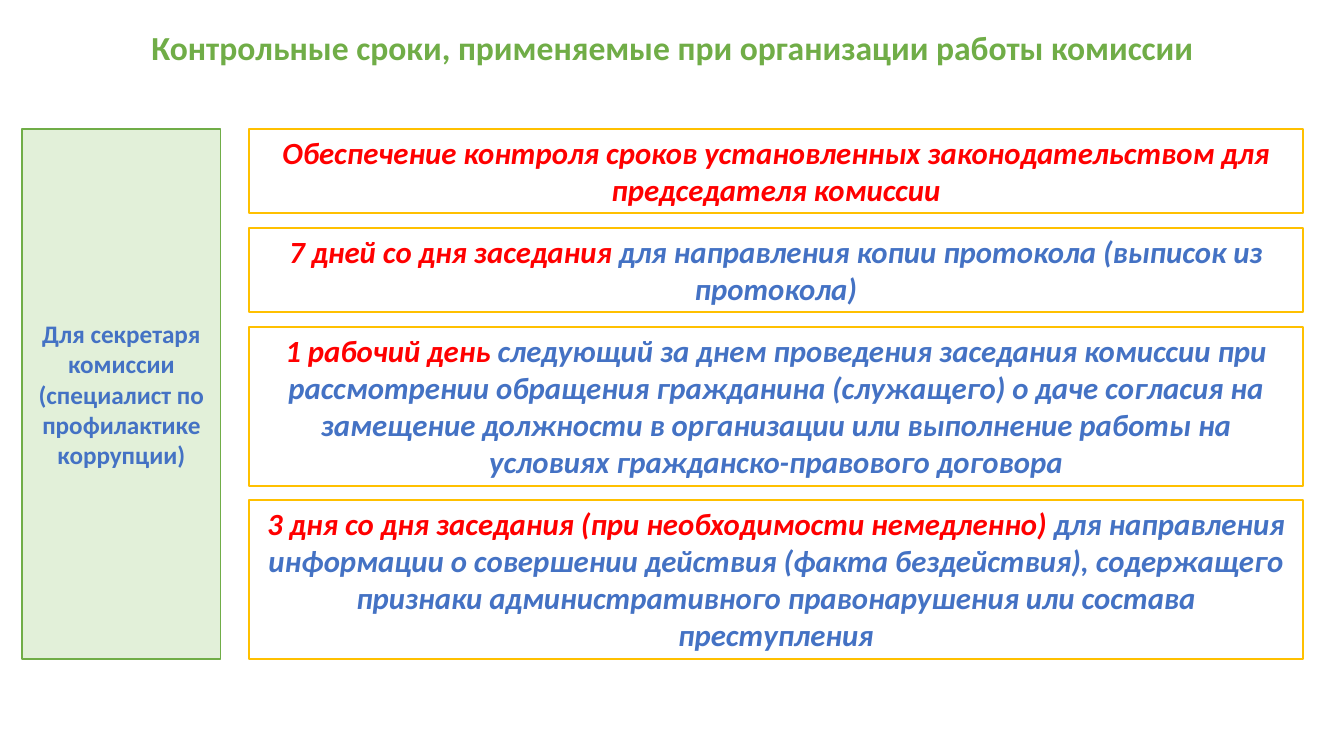
from pptx import Presentation
from pptx import util as u
from pptx.dml.color import RGBColor
from pptx.enum import shapes, text

COLORS = {
    "white": "FFFFFF",
    "green": "70AD47",
    "pale_green": "E2F0D9",
    "amber": "FFC000",
    "red": "FF0000",
    "blue": "4472C4",
}


class DeadlineSlide:
    """Holds the style and the current slide."""

    font = "Calibri"

    def __init__(self, deck):
        self.slide = deck.slides.add_slide(deck.slide_layouts[5])

    def color(self, name):
        return RGBColor.from_string(COLORS[name])

    def set_wording(self, frame, parts, size, anchor, italic=False):
        """Fill a frame with one centred paragraph of (wording, colour) parts."""
        frame.word_wrap = True
        frame.auto_size = text.MSO_AUTO_SIZE.NONE
        frame.vertical_anchor = anchor
        paragraph = frame.paragraphs[0]
        paragraph.alignment = text.PP_ALIGN.CENTER
        paragraph.line_spacing = 1.0
        paragraph.space_before = u.Pt(0)
        for wording, color in parts:
            run = paragraph.add_run()
            run.text = wording
            run.font.name = self.font
            run.font.size = u.Pt(size)
            run.font.bold = True
            run.font.italic = italic
            run.font.color.rgb = self.color(color)

    def title(self, wording, left, top, width, height):
        heading = self.slide.shapes.title
        heading.left, heading.top = u.Cm(left), u.Cm(top)
        heading.width, heading.height = u.Cm(width), u.Cm(height)
        self.set_wording(heading.text_frame, [(wording, "green")], 24,
                         text.MSO_ANCHOR.TOP)

    def box(self, left, top, width, height, fill, line, line_width):
        panel = self.slide.shapes.add_shape(
            shapes.MSO_SHAPE.RECTANGLE,
            u.Cm(left), u.Cm(top), u.Cm(width), u.Cm(height))
        panel.shadow.inherit = False
        panel.fill.solid()
        panel.fill.fore_color.rgb = self.color(fill)
        panel.line.color.rgb = self.color(line)
        panel.line.width = u.Pt(line_width)
        return panel.text_frame

    def role(self, wording, left, top, width, height):
        frame = self.box(left, top, width, height, "pale_green", "green", 1)
        self.set_wording(frame, [(wording, "blue")], 18, text.MSO_ANCHOR.MIDDLE)

    def deadline(self, term, duty, left, top, width, height):
        frame = self.box(left, top, width, height, "white", "amber", 1.5)
        parts = [(term, "red")] + ([(duty, "blue")] if duty else [])
        self.set_wording(frame, parts, 22, text.MSO_ANCHOR.TOP, italic=True)


# Term, duty and number of text lines
DEADLINES = [
    ("Обеспечение контроля сроков установленных законодательством для "
     "председателя комиссии", "", 2),
    ("7 дней со дня заседания ",
     "для направления копии протокола (выписок из протокола)", 2),
    ("1 рабочий день ",
     "следующий за днем проведения заседания комиссии при рассмотрении "
     "обращения гражданина (служащего) о даче согласия на замещение должности "
     "в организации или выполнение работы на условиях гражданско-правового "
     "договора", 4),
    ("3 дня со дня заседания (при необходимости немедленно) ",
     "для направления информации о совершении действия (факта бездействия), "
     "содержащего признаки административного правонарушения или состава "
     "преступления", 4),
]
TOP, GAP = 3.25, 0.36
LINE_HEIGHT, PADDING = 0.94, 0.25


def main():
    deck = Presentation()
    deck.slide_width, deck.slide_height = u.Cm(33.87), u.Cm(19.05)
    page = DeadlineSlide(deck)

    # Heading
    page.title("Контрольные сроки, применяемые при организации работы комиссии",
               1.45, 0.56, 31, 1.27)

    # Deadlines, stacked with equal gaps
    top = TOP
    for term, duty, lines in DEADLINES:
        height = lines * LINE_HEIGHT + PADDING
        page.deadline(term, duty, 6.28, top, 26.55, height)
        top += height + GAP

    # Responsible role, as tall as the stack
    page.role("Для секретаря комиссии (специалист по профилактике коррупции)",
              0.56, TOP, 5, top - GAP - TOP)

    deck.save("out.pptx")


if __name__ == "__main__":
    main()
